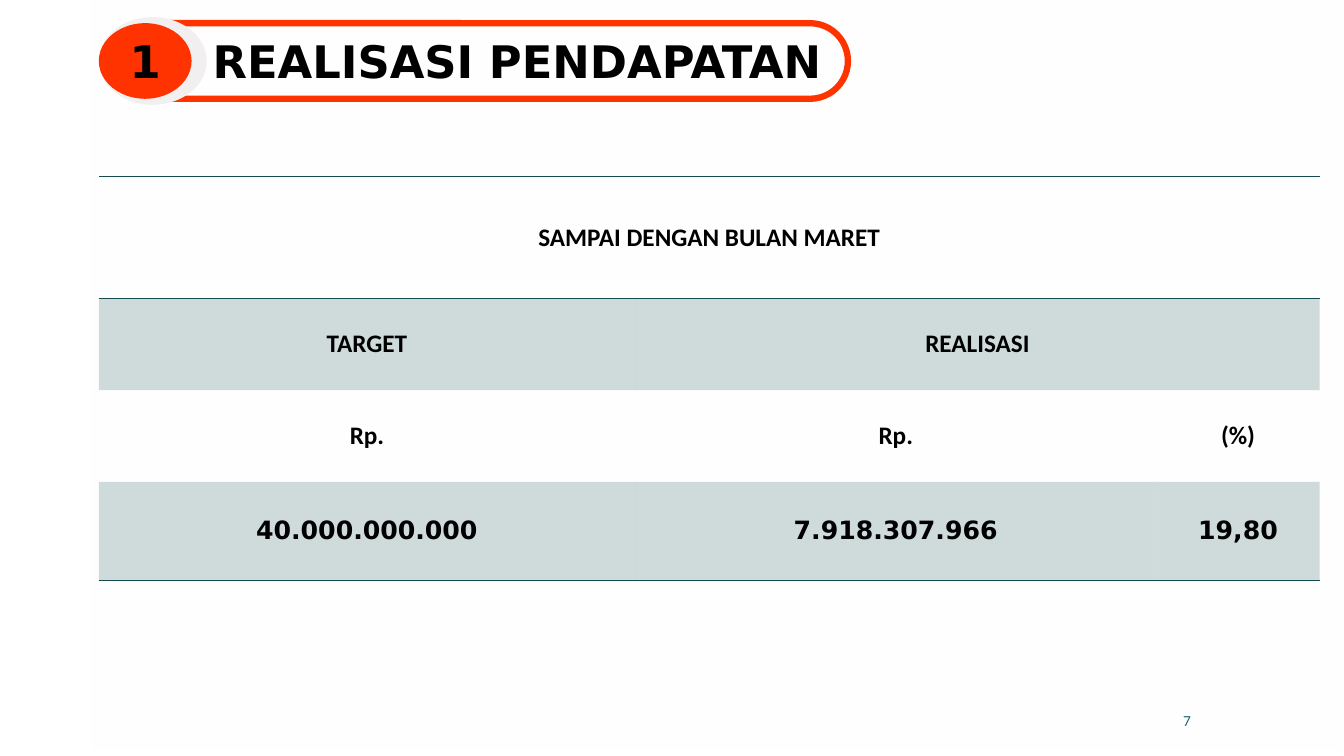
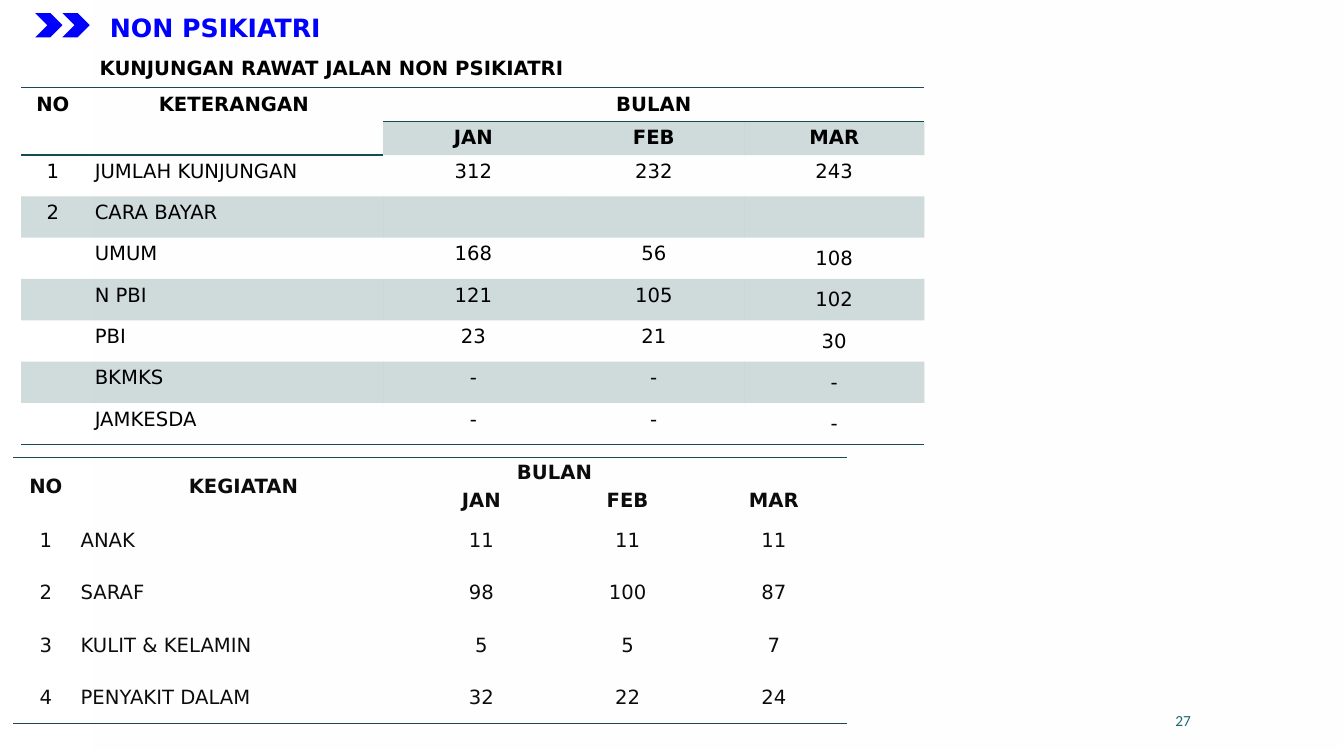
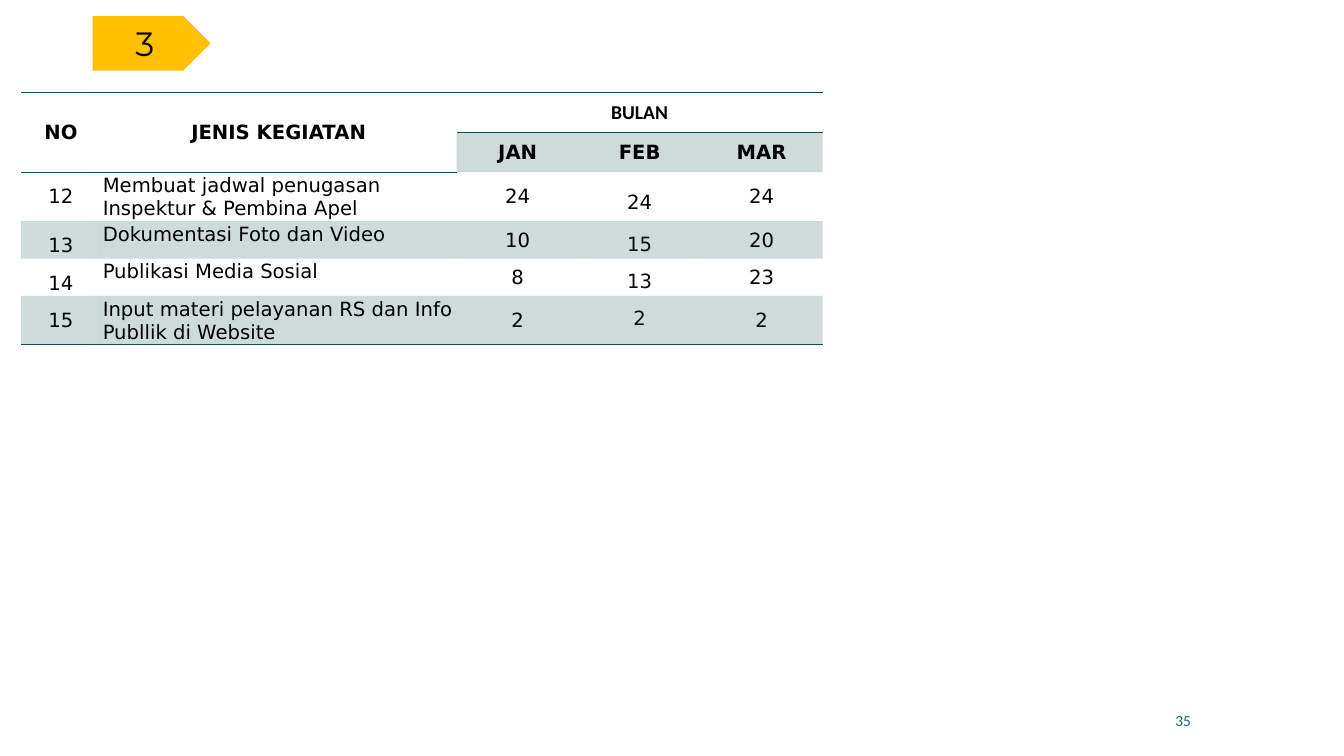
from lxml.etree import SubElement
from pptx import Presentation
from pptx.dml.color import RGBColor
from pptx.enum.shapes import MSO_SHAPE
from pptx.enum.text import MSO_ANCHOR, PP_ALIGN
from pptx.oxml.ns import qn
from pptx.util import Pt

PX = 9144
WIDTH, HEIGHT = 1333, 750

WHITE = RGBColor(0xFF, 0xFF, 0xFF)
BLACK = RGBColor(0, 0, 0)
NEAR_BLACK = RGBColor(0x0C, 0x0C, 0x0C)
TEAL = RGBColor(0x16, 0x4B, 0x4F)
NUMBER_TEAL = RGBColor(0x1F, 0x69, 0x6F)
ORANGE = RGBColor(0xFF, 0x33, 0x00)
PALE_GREY = RGBColor(0xF1, 0xEF, 0xF0)
BLUE = RGBColor(0, 0, 0xFF)
YELLOW = RGBColor(0xFF, 0xC0, 0x00)

BODY, PLAIN, DISPLAY = "DejaVu Sans", "Calibri", "Montserrat"
TOP, MIDDLE, BOTTOM = MSO_ANCHOR.TOP, MSO_ANCHOR.MIDDLE, MSO_ANCHOR.BOTTOM
LEFT, CENTER, RIGHT = PP_ALIGN.LEFT, PP_ALIGN.CENTER, PP_ALIGN.RIGHT

# side, top and bottom inset, anchor, line spacing, colour
CELL_STYLES = {
    "W": (20, 8, 8, MIDDLE, 1, BLACK),
    "Z": (0, 0, 0, MIDDLE, 1, BLACK),
    "T": (10, 5, 5, TOP, 1, BLACK),
    "C": (1, 1, 0, MIDDLE, 1, BLACK),
    "P": (2, 1, 0, MIDDLE, 1, NEAR_BLACK),
    "Q": (1, 1, 0, MIDDLE, 1, NEAR_BLACK),
    "N": (2, 2, 0, TOP, 1, BLACK),
    "L": (2, 2, 0, TOP, 1.5, BLACK),
    "F": (7, 0, 0, MIDDLE, 1.5, BLACK),
    "G": (7, 0, 0, TOP, 1.5, NEAR_BLACK),
}

INCOME = {
    "at": (98, 175), "columns": (532, 517, 162), "heights": (121, 91, 91, 98),
    "size": 18, "bold_rows": 4, "banded": True,
    "merges": [(0, 0, 1, 3), (1, 1, 1, 2)],
    "plain": {(0, 0), (1, 0), (1, 1), (2, 0), (2, 1), (2, 2)},
    "rows": [
        ("WWW", "SAMPAI DENGAN BULAN MARET", "", ""),
        ("WWW", "TARGET", "REALISASI", ""),
        ("WWW", "Rp.", "Rp.", "(%)"),
        ("WZZ", "40.000.000.000", "7.918.307.966", "19,80"),
    ],
}
MONTH_HEADER = [(0, 0, 2, 1), (0, 1, 2, 1), (0, 2, 1, 3)]
VISITS = {
    "at": (21, 87), "columns": (63, 296, 179, 179, 179),
    "heights": (33, 33) + (41,) * 7,
    "size": 14, "bold_rows": 2, "banded": True,
    "merges": MONTH_HEADER, "plain": set(),
    "rows": [
        ("TTTTT", "NO", "KETERANGAN", "BULAN", "", ""),
        ("TTTTT", "", "", "JAN", "FEB", "MAR"),
        ("TTTTT", "1", "JUMLAH KUNJUNGAN", "312", "232", "243"),
        ("TTTTT", "2", "CARA BAYAR", "", "", ""),
        ("TTTTC", "", "UMUM", "168", "56", "108"),
        ("TTTTC", "", "N PBI", "121", "105", "102"),
        ("TTTTC", "", "PBI", "23", "21", "30"),
        ("TTTTC", "", "BKMKS", "-", "-", "-"),
        ("TTTTC", "", "JAMKESDA", "-", "-", "-"),
    ],
}
CLINICS = {
    "at": (13, 454), "columns": (65, 327, 145, 145, 145),
    "heights": (28, 28) + (52,) * 4 + (),
    "size": 14, "bold_rows": 2, "banded": False,
    "merges": [(0, 0, 2, 1), (0, 1, 2, 1), (0, 2, 1, 2)], "plain": set(),
    "rows": [
        ("PPPPP", "NO", "KEGIATAN", "BULAN", "", ""),
        ("PPPPP", "", "", "JAN", "FEB", "MAR"),
        ("PPPQQ", "1", "ANAK", "11", "11", "11"),
        ("PPPQQ", "2", "SARAF", "98", "100", "87"),
        ("PPPQQ", "3", "KULIT & KELAMIN", "5", "5", "7"),
        ("PPPQQ", "4", "PENYAKIT DALAM", "32", "22", "24"),
    ],
}
ACTIVITIES = {
    "at": (21, 92), "columns": (79, 353, 121, 121, 121),
    "heights": (38, 38, 47, 36, 36, 47),
    "size": 14, "bold_rows": 2, "banded": True,
    "merges": MONTH_HEADER, "plain": {(0, 2)},
    "rows": [
        ("WWWWW", "NO", "JENIS KEGIATAN", "BULAN", "", ""),
        ("WWWWW", "", "", "JAN", "FEB", "MAR"),
        ("LNCFC", "12", "Membuat jadwal penugasan Inspektur & Pembina Apel", "24", "24", "24"),
        ("LNCGC", "13", "Dokumentasi Foto dan Video", "10", "15", "20"),
        ("LNCGC", "14", "Publikasi Media Sosial", "8", "13", "23"),
        ("LNCGC", "15", "Input materi pelayanan RS dan Info Publlik di Website", "2", "2", "2"),
    ],
}


def px(*lengths):
    return [round(length * PX) for length in lengths]


def set_alpha(color_element, percent):
    SubElement(color_element, qn("a:alpha"), val=str(percent * 1000))


def write(paragraph, text, size, font, color, bold=False, align=CENTER, spacing=1):
    paragraph.alignment = align
    if spacing != 1:
        paragraph.line_spacing = spacing
    run = paragraph.add_run()
    run.text = text
    run.font.size = Pt(size)
    run.font.name = font
    run.font.bold = bold
    run.font.color.rgb = color


def add_text(slide, box, text, size, font, color, anchor=TOP, wrap=True, **style):
    frame = slide.shapes.add_textbox(*px(*box)).text_frame
    frame.word_wrap = wrap
    frame.vertical_anchor = anchor
    write(frame.paragraphs[0], text, size, font, color, **style)


def add_shape(slide, kind, box, fill=None, line=None, line_width=0):
    shape = slide.shapes.add_shape(kind, *px(*box))
    shape.shadow.inherit = False
    if fill is None:
        shape.fill.background()
    else:
        shape.fill.solid()
        shape.fill.fore_color.rgb = fill
    if line is None:
        shape.line.fill.background()
    else:
        shape.line.color.rgb = line
        shape.line.width = Pt(line_width)
    return shape


def label(shape, text, size, font, bold=False):
    frame = shape.text_frame
    frame.vertical_anchor = MIDDLE
    write(frame.paragraphs[0], text, size, font, BLACK, bold)


def add_border(cell, side):
    properties = cell._tc.get_or_add_tcPr()
    line = SubElement(properties, qn(f"a:{side}"), w=str(Pt(1)))
    fill = SubElement(line, qn("a:solidFill"))
    SubElement(fill, qn("a:srgbClr"), val=str(TEAL))


def format_cell(cell, text, style, size, font, bold, align):
    side, top, bottom, anchor, spacing, color = CELL_STYLES[style]
    cell.margin_left, cell.margin_right, cell.margin_top, cell.margin_bottom = px(side, side, top, bottom)
    cell.vertical_anchor = anchor
    paragraph = cell.text_frame.paragraphs[0]
    if text:
        write(paragraph, text, size, font, color, bold, align, spacing)
    else:
        SubElement(paragraph._p, qn("a:endParaRPr"), sz=str(size * 100))


def add_table(slide, data):
    rows, columns, heights = data["rows"], data["columns"], data["heights"]
    frame = slide.shapes.add_table(len(rows), len(columns), *px(*data["at"], sum(columns), sum(heights)))
    table = frame.table
    table.first_row = table.horz_banding = False
    table._tbl.tblPr.find(qn("a:tableStyleId")).text = "{2D5ABB26-0587-4C30-8999-92F81FD0307C}"
    for column, width in zip(table.columns, px(*columns)):
        column.width = width
    for row, height in zip(table.rows, px(*heights)):
        row.height = height
    for row, column, row_span, column_span in data["merges"]:
        last = table.cell(row + row_span - 1, column + column_span - 1)
        table.cell(row, column).merge(last)
    for row, (styles, *texts) in enumerate(rows):
        for column, (style, text) in enumerate(zip(styles, texts)):
            cell = table.cell(row, column)
            heading = row < data["bold_rows"]
            font = PLAIN if (row, column) in data["plain"] else BODY
            align = LEFT if column == 1 and not heading else CENTER
            format_cell(cell, text, style, data["size"], font, heading, align)
            if cell.is_spanned:
                continue
            if row == 0:
                add_border(cell, "lnT")
            if row == len(rows) - 1 or (row == 0 and data["banded"]):
                add_border(cell, "lnB")
            if data["banded"] and row % 2:
                cell.fill.solid()
                cell.fill.fore_color.rgb = TEAL
                set_alpha(cell._tc.tcPr.find(qn("a:solidFill")).find(qn("a:srgbClr")), 20)
            else:
                cell.fill.background()


def new_slide(presentation, number):
    slide = presentation.slides.add_slide(presentation.slide_layouts[6])
    panel = add_shape(slide, MSO_SHAPE.RECTANGLE, (91, 0, 1241, HEIGHT), WHITE)
    panel.fill.gradient()
    panel.fill.gradient_angle = 270
    for stop, alpha in zip(panel.fill.gradient_stops, (60, 0)):
        stop.color.rgb = WHITE
    for color, alpha in zip(panel._element.spPr.find(qn("a:gradFill")).iter(qn("a:srgbClr")), (60, 0)):
        set_alpha(color, alpha)
    add_text(slide, (880, 695, 311, 40), str(number), 11, PLAIN, NUMBER_TEAL, MIDDLE, align=RIGHT)
    return slide


def build_income(presentation):
    slide = new_slide(presentation, 7)
    capsule = add_shape(slide, MSO_SHAPE.ROUNDED_RECTANGLE, (110, 23, 731, 75), None, ORANGE, 4.5)
    capsule.adjustments[0] = 0.5
    add_shape(slide, MSO_SHAPE.OVAL, (98, 17, 107, 87), PALE_GREY)
    badge = add_shape(slide, MSO_SHAPE.OVAL, (98, 23, 92, 75), ORANGE)
    label(badge, "1", 32, BODY, True)
    add_text(slide, (83, 17, 860, 75), "REALISASI PENDAPATAN", 32, BODY, BLACK, BOTTOM, bold=True, spacing=0.9)
    add_table(slide, INCOME)


def build_visits(presentation):
    slide = new_slide(presentation, 27)
    add_table(slide, CLINICS)
    add_text(slide, (89, 53, 507, 31), "KUNJUNGAN RAWAT JALAN NON PSIKIATRI", 14, BODY, BLACK,
             wrap=False, bold=True, align=LEFT, spacing=0.9)
    add_text(slide, (90, 7, 247, 40), "NON PSIKIATRI", 18, BODY, BLUE, wrap=False, bold=True)
    for index in range(2):
        add_shape(slide, MSO_SHAPE.CHEVRON, (35 + 27 * index, 13, 27, 24), BLUE)
    add_table(slide, VISITS)


def build_activities(presentation):
    slide = new_slide(presentation, 35)
    add_table(slide, ACTIVITIES)
    tag = add_shape(slide, MSO_SHAPE.PENTAGON, (92, 16, 117, 54), YELLOW)
    label(tag, "3", 24, DISPLAY)


def main():
    presentation = Presentation()
    presentation.slide_width, presentation.slide_height = px(WIDTH, HEIGHT)
    for build in (build_income, build_visits, build_activities):
        build(presentation)
    presentation.save("out.pptx")


if __name__ == "__main__":
    main()
